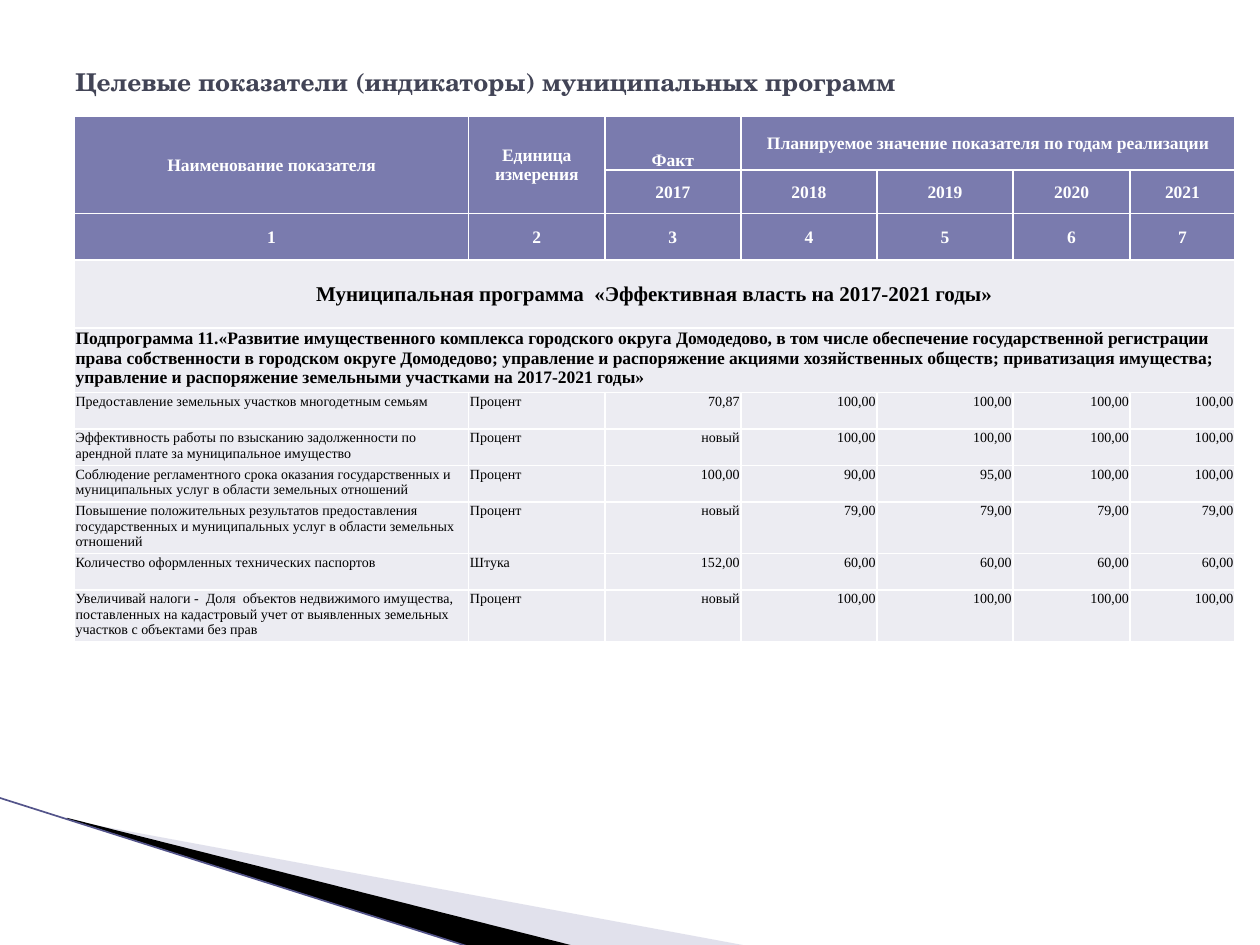
from lxml import etree
from pptx import Presentation
from pptx import util as u
from pptx.dml.color import RGBColor
from pptx.enum import shapes, text
from pptx.oxml import ns

WHITE = RGBColor(0xFF, 0xFF, 0xFF)
BLACK = RGBColor(0, 0, 0)
TITLE_COLOR = RGBColor(0x42, 0x44, 0x56)
HEADER_FILL = RGBColor(0x7A, 0x7B, 0xAE)
BODY_FILL = RGBColor(0xEC, 0xEC, 0xF2)
LILAC = RGBColor(0xB6, 0xB6, 0xD1)
EDGE = RGBColor(0x53, 0x54, 0x8A)

LEFT, CENTER, RIGHT = text.PP_ALIGN.LEFT, text.PP_ALIGN.CENTER, text.PP_ALIGN.RIGHT
TOP, MIDDLE, BOTTOM = text.MSO_ANCHOR.TOP, text.MSO_ANCHOR.MIDDLE, text.MSO_ANCHOR.BOTTOM

TITLE = "Целевые показатели (индикаторы) муниципальных программ"
HEADER = [
    ["Наименование показателя", "Единица измерения", "Факт",
     "Планируемое значение показателя по годам реализации", "", "", ""],
    ["", "", "2017", "2018", "2019", "2020", "2021"],
    ["1", "2", "3", "4", "5", "6", "7"],
]
PROGRAMME = "Муниципальная программа  «Эффективная власть на 2017-2021 годы»"
SUBPROGRAMME = (
    "Подпрограмма 11.«Развитие имущественного комплекса городского округа Домодедово, "
    "в том числе обеспечение государственной регистрации права собственности в городском "
    "округе Домодедово; управление и распоряжение акциями хозяйственных обществ; "
    "приватизация имущества; управление и распоряжение земельными участками на 2017-2021 годы»"
)
INDICATORS = [
    ["Предоставление земельных участков многодетным семьям",
     "Процент", "70,87", "100,00", "100,00", "100,00", "100,00"],
    ["Эффективность работы по взысканию задолженности по арендной плате за муниципальное имущество",
     "Процент", "новый", "100,00", "100,00", "100,00", "100,00"],
    ["Соблюдение регламентного срока оказания государственных и муниципальных услуг "
     "в области земельных отношений",
     "Процент", "100,00", "90,00", "95,00", "100,00", "100,00"],
    ["Повышение положительных результатов предоставления государственных и муниципальных услуг "
     "в области земельных отношений",
     "Процент", "новый", "79,00", "79,00", "79,00", "79,00"],
    ["Количество оформленных технических паспортов",
     "Штука", "152,00", "60,00", "60,00", "60,00", "60,00"],
    ["Увеличивай налоги -  Доля  объектов недвижимого имущества, поставленных на кадастровый учет "
     "от выявленных земельных участков с объектами без прав",
     "Процент", "новый", "100,00", "100,00", "100,00", "100,00"],
]
COLUMN_WIDTHS = [3.13, 1.08, 1.08, 1.08, 1.08, 0.93, 0.83]
ROW_HEIGHTS = [0.43, 0.31, 0.37, 0.54, 0.41] + [0.29] * len(INDICATORS)
MERGES = [((0, 0), (1, 0)), ((0, 1), (1, 1)), ((0, 3), (0, 6)),
          ((3, 0), (3, 6)), ((4, 0), (4, 6))]


def format_text(paragraph, font, size, color, bold, align):
    paragraph.alignment = align
    for run in paragraph.runs:
        run.font.name = font
        run.font.size = u.Pt(size)
        run.font.bold = bold
        run.font.color.rgb = color


def add_wedge(slide, points, color, alpha=100):
    start, *rest = [(u.Inches(x), u.Inches(y)) for x, y in points]
    builder = slide.shapes.build_freeform(*start)
    builder.add_line_segments(rest, close=True)
    shape = builder.convert_to_shape()
    shape.shadow.inherit = False
    shape.fill.solid()
    shape.fill.fore_color.rgb = color
    shape.line.fill.background()
    if alpha < 100:
        color_element = shape.fill._xPr.find(".//" + ns.qn("a:srgbClr"))
        etree.SubElement(color_element, ns.qn("a:alpha"), val=str(alpha * 1000))


def add_corner(slide, left, top, bottom):
    add_wedge(slide, [(left + 0.56, top + 0.18), (left + 5.96, bottom),
                      (left + 4.57, bottom), (left + 0.56, top + 0.17)], LILAC, 40)
    add_wedge(slide, [(left + 0.54, top + 0.16), (left + 4.58, bottom),
                      (left + 3.73, bottom), (left + 0.55, top + 0.17)], BLACK)
    edge = slide.shapes.add_connector(
        shapes.MSO_CONNECTOR.STRAIGHT, u.Inches(left), u.Inches(top),
        u.Inches(left + 3.72), u.Inches(bottom))
    edge.line.color.rgb = EDGE
    edge.line.width = u.Pt(0.95)
    etree.SubElement(edge._element.spPr, ns.qn("a:effectLst"))


def add_title(slide, left, top, width, height):
    box = slide.shapes.add_textbox(*map(u.Inches, (left, top, width, height)))
    frame = box.text_frame
    frame.word_wrap = True
    frame.vertical_anchor = MIDDLE
    frame.text = TITLE
    format_text(frame.paragraphs[0], "TeX Gyre Schola", 14, TITLE_COLOR, True, LEFT)


def add_borders(cell):
    properties = cell._tc.get_or_add_tcPr()
    for index, side in enumerate(("lnL", "lnR", "lnT", "lnB")):
        line = etree.Element(ns.qn("a:" + side), w=str(u.Pt(1)))
        fill = etree.SubElement(line, ns.qn("a:solidFill"))
        etree.SubElement(fill, ns.qn("a:srgbClr"), val=str(WHITE))
        properties.insert(index, line)


def cell_style(row, column):
    if row < 3:
        anchor = BOTTOM if (row, column) == (0, 2) else MIDDLE
        return HEADER_FILL, WHITE, 10, True, CENTER, anchor
    if row == 3:
        return BODY_FILL, BLACK, 12, True, CENTER, MIDDLE
    if row == 4:
        return BODY_FILL, BLACK, 10, True, LEFT, TOP
    return BODY_FILL, BLACK, 8, False, LEFT if column < 2 else RIGHT, TOP


def fill_cell(cell, content, row, column):
    fill, color, size, bold, align, anchor = cell_style(row, column)
    cell.fill.solid()
    cell.fill.fore_color.rgb = fill
    cell.margin_left = cell.margin_right = cell.margin_top = u.Inches(0.01)
    cell.margin_bottom = 0
    cell.vertical_anchor = anchor
    add_borders(cell)
    if content:
        cell.text_frame.text = content
        format_text(cell.text_frame.paragraphs[0], "Times New Roman", size, color, bold, align)


def add_indicator_table(slide, left, top):
    blanks = [""] * (len(COLUMN_WIDTHS) - 1)
    rows = HEADER + [[PROGRAMME] + blanks, [SUBPROGRAMME] + blanks] + INDICATORS
    table = slide.shapes.add_table(
        len(rows), len(COLUMN_WIDTHS), u.Inches(left), u.Inches(top),
        u.Inches(sum(COLUMN_WIDTHS)), u.Inches(sum(ROW_HEIGHTS))).table
    for column, width in zip(table.columns, COLUMN_WIDTHS):
        column.width = u.Inches(width)
    for row, height in zip(table.rows, ROW_HEIGHTS):
        row.height = u.Inches(height)
    for first, last in MERGES:
        table.cell(*first).merge(table.cell(*last))
    for i, row in enumerate(rows):
        for j, content in enumerate(row):
            fill_cell(table.cell(i, j), content, i, j)


def main():
    presentation = Presentation()
    presentation.slide_width = u.Inches(10)
    presentation.slide_height = u.Inches(7.5)
    slide = presentation.slides.add_slide(presentation.slide_layouts[6])
    add_corner(slide, -0.01, 6.33, 7.51)
    add_title(slide, 0.5, 0.3, 9, 0.69)
    add_indicator_table(slide, 0.59, 0.92)
    presentation.save("out.pptx")


if __name__ == "__main__":
    main()
